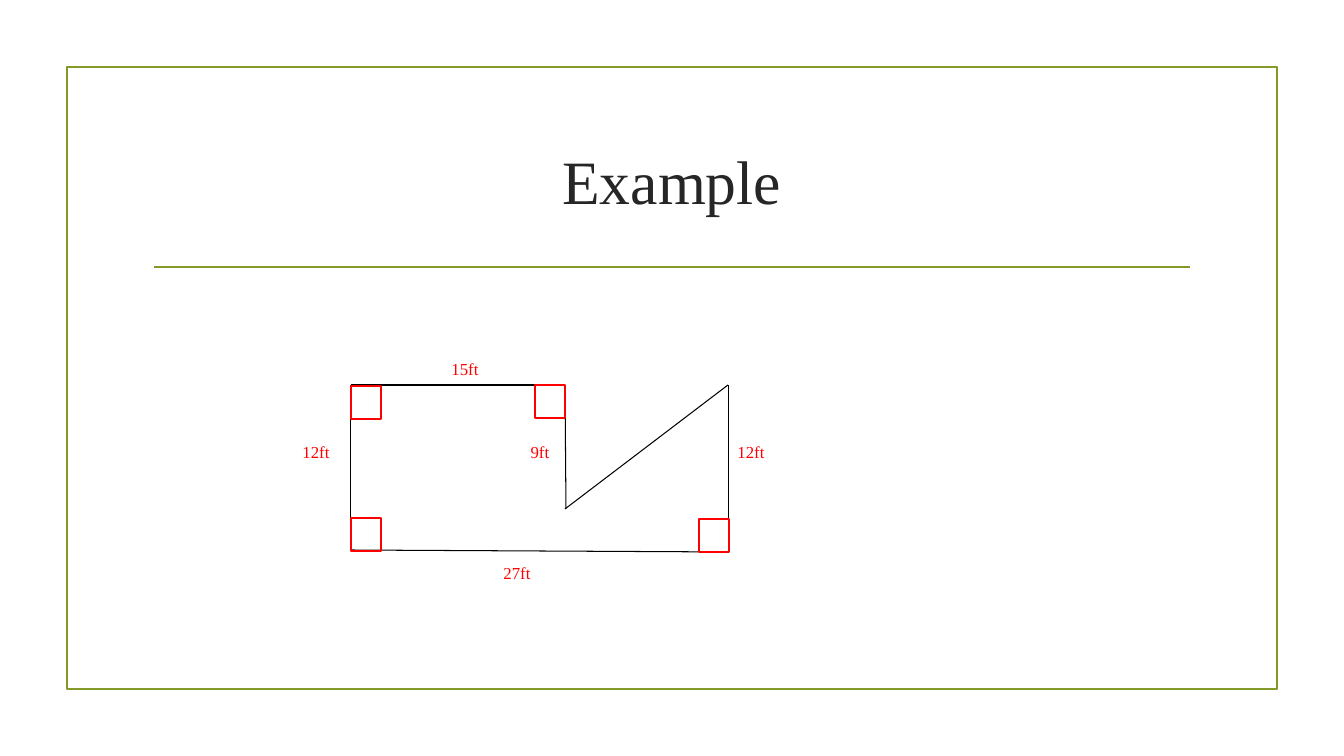
from lxml import etree
from pptx import Presentation
from pptx.dml.color import RGBColor
from pptx.enum.shapes import MSO_CONNECTOR, MSO_SHAPE
from pptx.enum.text import MSO_ANCHOR, PP_ALIGN
from pptx.oxml.ns import qn
from pptx.util import Emu, Pt

PX_PER_INCH = 100.8
OLIVE = RGBColor(0x83, 0x99, 0x2A)
CHARCOAL = RGBColor(0x26, 0x26, 0x26)
BLACK = RGBColor(0, 0, 0)
RED = RGBColor(0xFF, 0, 0)
FONT = "Times New Roman"

LABEL_WIDTH, LABEL_HEIGHT = 60, 28
CORNER_WIDTH, CORNER_HEIGHT = 30, 33

SIDES = [
    ((351, 385), (351, 550)),
    ((351, 550), (729, 552)),
    ((351, 385), (565, 385)),
    ((729, 552), (729, 385)),
    ((565, 385), (566, 509)),
    ((565, 509), (728, 385)),
]
RIGHT_ANGLES = [(699, 519), (351, 518), (535, 385), (351, 386)]
LENGTHS = [
    ("15ft", 465, 369),
    ("12ft", 316, 452),
    ("9ft", 540, 452),
    ("12ft", 751, 452),
    ("27ft", 517, 573),
]


def px(count):
    return Emu(round(count * 914400 / PX_PER_INCH))


def add_outline(slide, left, top, width, height, color):
    outline = slide.shapes.add_shape(
        MSO_SHAPE.RECTANGLE, px(left), px(top), px(width), px(height))
    outline.shadow.inherit = False
    outline.fill.background()
    outline.line.color.rgb = color
    outline.line.width = Pt(1.25)


def add_line(slide, start, end, color, weight):
    line = slide.shapes.add_connector(
        MSO_CONNECTOR.STRAIGHT, *map(px, start + end))
    line.line.color.rgb = color
    line.line.width = Pt(weight)
    etree.SubElement(line._element.spPr, qn("a:effectLst"))


def add_text(slide, text, left, top, width, height, *, size, color):
    box = slide.shapes.add_textbox(px(left), px(top), px(width), px(height))
    frame = box.text_frame
    frame.word_wrap = True
    frame.vertical_anchor = MSO_ANCHOR.MIDDLE
    frame.margin_left = frame.margin_right = 0
    frame.margin_top = frame.margin_bottom = 0
    paragraph = frame.paragraphs[0]
    paragraph.alignment = PP_ALIGN.CENTER
    run = paragraph.add_run()
    run.text = text
    run.font.name = FONT
    run.font.size = Pt(size)
    run.font.color.rgb = color


def add_length(slide, text, center_x, center_y):
    add_text(slide, text, center_x - LABEL_WIDTH // 2,
             center_y - LABEL_HEIGHT // 2, LABEL_WIDTH, LABEL_HEIGHT,
             size=12, color=RED)


def main():
    deck = Presentation()
    deck.slide_width, deck.slide_height = px(1344), px(756)
    slide = deck.slides.add_slide(deck.slide_layouts[6])

    add_outline(slide, 67, 67, 1210, 622, OLIVE)
    add_line(slide, (154, 267), (1190, 267), OLIVE, 1.25)
    add_text(slide, "Example", 143, 108, 1058, 144, size=44, color=CHARCOAL)

    for start, end in SIDES:
        add_line(slide, start, end, BLACK, 0.75)
    for left, top in RIGHT_ANGLES:
        add_outline(slide, left, top, CORNER_WIDTH, CORNER_HEIGHT, RED)
    for text, center_x, center_y in LENGTHS:
        add_length(slide, text, center_x, center_y)

    deck.save("out.pptx")


if __name__ == "__main__":
    main()
